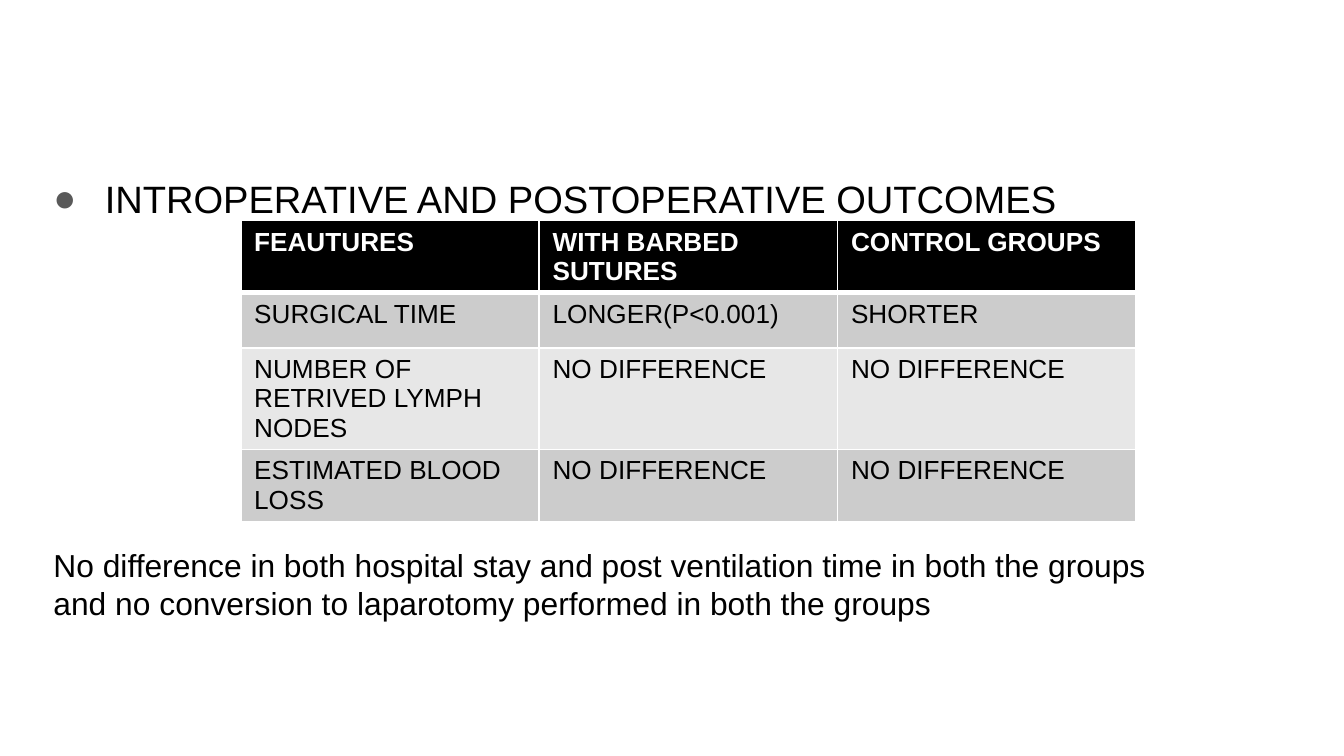
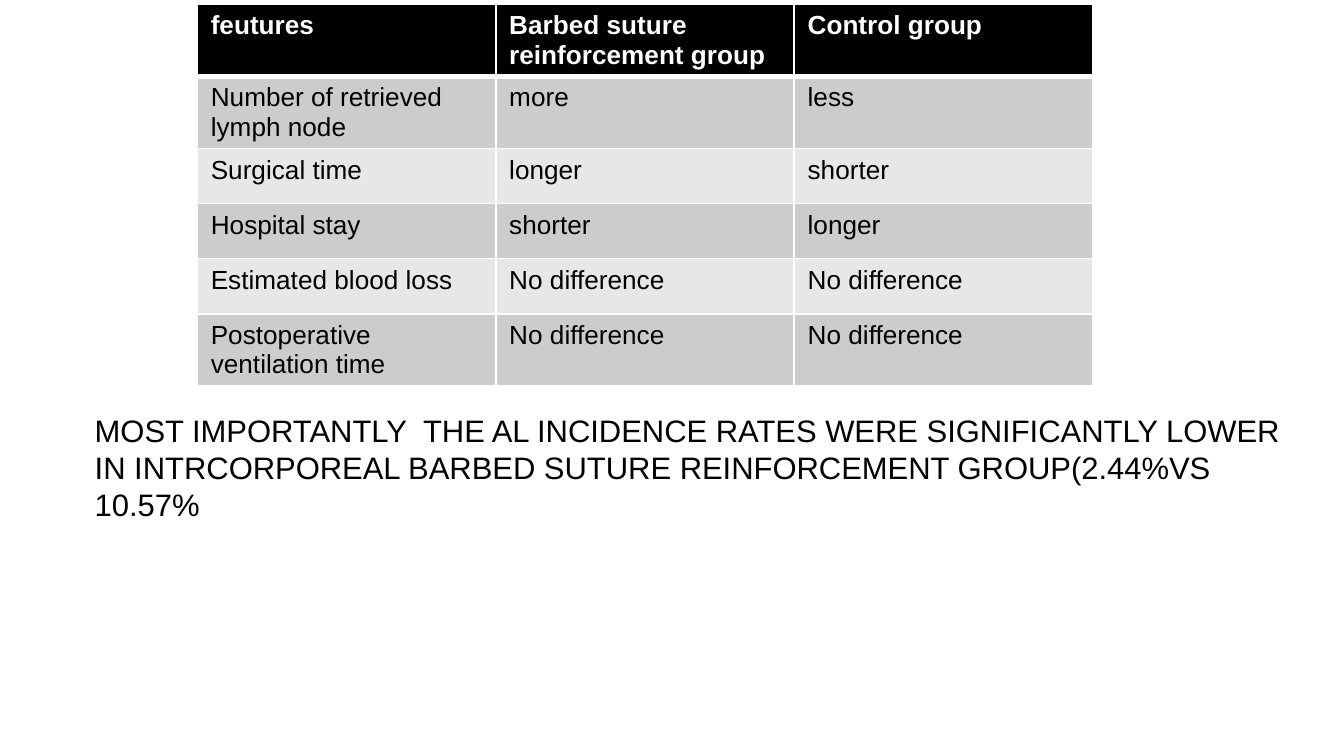
from lxml import etree
from pptx import Presentation
from pptx.dml.color import RGBColor
from pptx.enum.text import MSO_ANCHOR as Anchor, MSO_AUTO_SIZE as AutoSize, PP_ALIGN as Align
from pptx.oxml.ns import qn
from pptx.util import Cm, Pt

BLACK = RGBColor(0x00, 0x00, 0x00)
WHITE = RGBColor(0xFF, 0xFF, 0xFF)
BULLET_GREY = RGBColor(0x59, 0x59, 0x59)
BANDS = (RGBColor(0xCC, 0xCC, 0xCC), RGBColor(0xE7, 0xE7, 0xE7))
FONT = "Arial"

# Row heights in cm, by the number of text lines in the row
ROW_HEIGHTS = {1: 1.04, 2: 1.35, 3: 1.91}
COLUMN_WIDTH = 5.64
BODY_SIZE = (23.67, 9.5)
INSET = 0.25

SLIDES = [
    {
        "body_at": (0.46, 3.07),
        "top_inset": INSET,
        "paragraphs": [
            {"text": "INTROPERATIVE AND POSTOPERATIVE OUTCOMES", "size": 20.4, "bullet": True},
            {"text": "No difference in both hospital stay and post ventilation time in both the groups",
             "size": 17, "before": 174},
            {"text": "and no conversion to laparotomy performed in both the groups", "size": 17},
        ],
        "table_at": (4.55, 4.17),
        "row_lines": (2, 1, 3, 2),
        "rows": [
            ("FEAUTURES", "WITH BARBED SUTURES", "CONTROL GROUPS"),
            ("SURGICAL TIME", "LONGER(P<0.001)", "SHORTER"),
            ("NUMBER OF RETRIVED LYMPH NODES", "NO DIFFERENCE", "NO DIFFERENCE"),
            ("ESTIMATED BLOOD LOSS", "NO DIFFERENCE", "NO DIFFERENCE"),
        ],
    },
    {
        "body_at": (1.24, 0.79),
        "top_inset": 6.98,
        "paragraphs": [
            {"text": "MOST IMPORTANTLY  THE AL INCIDENCE RATES WERE SIGNIFICANTLY LOWER IN "
                     "INTRCORPOREAL BARBED SUTURE REINFORCEMENT GROUP(2.44%VS 10.57%", "size": 16.6},
        ],
        "table_at": (3.73, 0.08),
        "row_lines": (2, 2, 1, 1, 1, 2),
        "rows": [
            ("feutures", "Barbed suture reinforcement group", "Control group"),
            ("Number of retrieved lymph node", "more", "less"),
            ("Surgical time", "longer", "shorter"),
            ("Hospital stay", "shorter", "longer"),
            ("Estimated blood loss", "No difference", "No difference"),
            ("Postoperative ventilation time", "No difference", "No difference"),
        ],
    },
]


def set_attributes(target, values):
    for name, value in values.items():
        setattr(target, name, value)


def add_span(para, text, size, color, bold=False):
    span = para.add_run()
    span.text = text
    set_attributes(span.font, {"name": FONT, "size": Pt(size), "bold": bold})
    span.font.color.rgb = color


def set_bullet(para, bulleted):
    """Set the indents, with a grey dot or with no bullet."""
    properties = para._p.get_or_add_pPr()
    left, indent = (1.27, -0.97) if bulleted else (0.3, 0)
    properties.set("marL", str(Cm(left)))
    properties.set("indent", str(Cm(indent)))
    if bulleted:
        color = etree.SubElement(properties, qn("a:buClr"))
        etree.SubElement(color, qn("a:srgbClr"), val=str(BULLET_GREY))
        etree.SubElement(properties, qn("a:buChar"), char="●")
    else:
        etree.SubElement(properties, qn("a:buNone"))


def fill_body(body, content):
    left, top = content["body_at"]
    width, height = BODY_SIZE
    set_attributes(body, {"left": Cm(left), "top": Cm(top), "width": Cm(width), "height": Cm(height)})
    frame = body.text_frame
    set_attributes(frame, {
        "word_wrap": True, "auto_size": AutoSize.NONE, "vertical_anchor": Anchor.TOP,
        "margin_left": Cm(INSET), "margin_right": Cm(INSET),
        "margin_top": Cm(content["top_inset"]), "margin_bottom": Cm(INSET),
    })
    for index, item in enumerate(content["paragraphs"]):
        para = frame.add_paragraph() if index else frame.paragraphs[0]
        set_attributes(para, {
            "alignment": Align.LEFT, "line_spacing": 1.0,
            "space_before": Pt(item.get("before", 0)), "space_after": Pt(0),
        })
        set_bullet(para, item.get("bullet", False))
        add_span(para, item["text"], item["size"], BLACK)


def set_borders(cell, row):
    """Draw white borders, thicker between the header and the first data row."""
    widths = {"lnL": 1, "lnR": 1, "lnT": 3 if row == 1 else 1, "lnB": 3 if row == 0 else 1}
    properties = cell._tc.get_or_add_tcPr()
    for side, width in widths.items():
        line = etree.SubElement(properties, qn(f"a:{side}"), w=str(Pt(width)))
        fill = etree.SubElement(line, qn("a:solidFill"))
        etree.SubElement(fill, qn("a:srgbClr"), val=str(WHITE))


def add_outcome_table(slide, content):
    rows = content["rows"]
    heights = [Cm(ROW_HEIGHTS[lines]) for lines in content["row_lines"]]
    columns = len(rows[0])
    left, top = content["table_at"]
    table = slide.shapes.add_table(len(rows), columns, Cm(left), Cm(top),
                                   Cm(COLUMN_WIDTH * columns), sum(heights)).table
    for column in table.columns:
        column.width = Cm(COLUMN_WIDTH)
    for r, texts in enumerate(rows):
        table.rows[r].height = heights[r]
        header = r == 0
        for c, text in enumerate(texts):
            cell = table.cell(r, c)
            set_borders(cell, r)
            cell.fill.solid()
            cell.fill.fore_color.rgb = BLACK if header else BANDS[(r - 1) % 2]
            add_span(cell.text_frame.paragraphs[0], text, 14, WHITE if header else BLACK, header)


def main():
    deck = Presentation()
    set_attributes(deck, {"slide_width": Cm(25.4), "slide_height": Cm(14.29)})
    for content in SLIDES:
        slide = deck.slides.add_slide(deck.slide_layouts[1])
        title = slide.shapes.title.element
        title.getparent().remove(title)
        fill_body(slide.placeholders[1], content)
        add_outcome_table(slide, content)
    deck.save("out.pptx")


if __name__ == "__main__":
    main()
